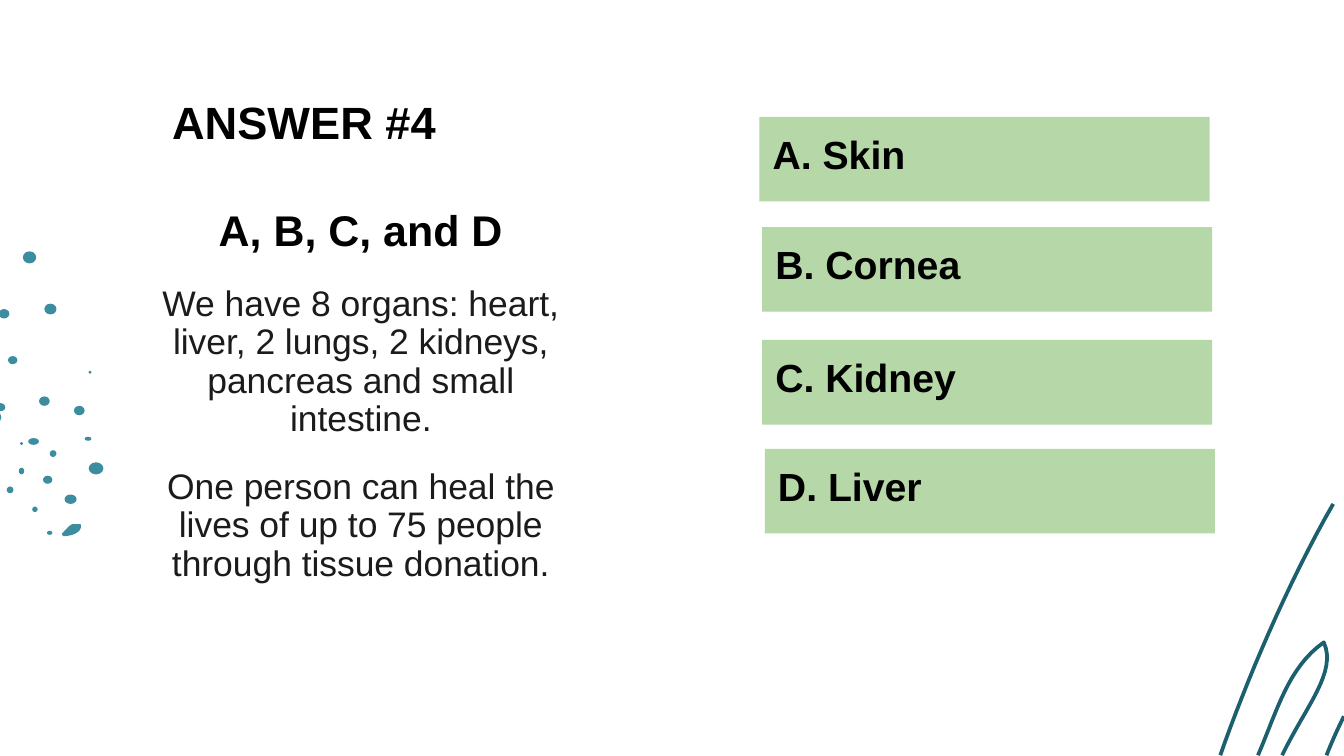
from lxml import etree
from pptx import Presentation
from pptx import util as u
from pptx.dml.color import RGBColor
from pptx.enum import shapes, text
from pptx.oxml import ns

WIDTH, HEIGHT = u.Inches(10), u.Inches(10) * 9 // 16
BLACK, DARK, GREEN, TEAL, DEEP = "000000", "1B1B1B", "B6D7A8", "3C8DA0", "1C5F6F"

DOTS = [
    (-0.12, 3.05, 0.13, 0.11), (0.15, 3.29, 0.02, 0.02), (0.14, 3.48, 0.04, 0.05),
    (0.24, 3.77, 0.04, 0.04), (0.35, 3.95, 0.04, 0.03), (0.48, 3.68, 0.09, 0.07),
    (0.32, 3.54, 0.07, 0.06), (0.05, 3.62, 0.05, 0.05), (0.37, 3.35, 0.05, 0.05),
    (0.21, 3.26, 0.08, 0.05), (0.29, 2.95, 0.08, 0.07), (-0.03, 3, 0.07, 0.06),
    (0.06, 2.65, 0.07, 0.06), (-0.01, 2.3, 0.08, 0.07), (0.66, 2.76, 0.02, 0.02),
    (0.55, 3.02, 0.08, 0.07), (0.63, 3.25, 0.05, 0.03), (0.66, 3.44, 0.11, 0.09),
    (0.33, 2.26, 0.09, 0.08), (0.17, 1.87, 0.1, 0.09),
]
DROP = [
    [(0.56, 3.9), (0.52, 3.89), (0.49, 3.95), (0.46, 3.97)],
    [(0.47, 3.99), (0.55, 3.99), (0.62, 3.95), (0.6, 3.9)],
]
STROKES = [
    [[(9.92, 3.75), (9.57, 4.36), (9.27, 5.08), (9.08, 5.62)]],
    [[(9.36, 5.62), (9.5, 5.3), (9.58, 4.97), (9.85, 4.78)],
     [(9.85, 4.78), (9.95, 5), (9.72, 5.25), (9.54, 5.62)]],
    [[(9.87, 5.62), (9.91, 5.52), (9.95, 5.43), (10, 5.33)]],
]
ANSWERS = [("A. Skin", 5.65, 0.87), ("B. Cornea", 5.67, 1.69),
           ("C. Kidney", 5.67, 2.53), ("D. Liver", 5.69, 3.34)]
BODY = [
    ("A, B, C, and D", 23, BLACK, True),
    ("We have 8 organs: heart, liver, 2 lungs, 2 kidneys, pancreas and small intestine.",
     19, DARK, False),
    ("One person can heal the lives of up to 75 people through tissue donation.",
     19, DARK, False),
]


def color(value):
    return RGBColor.from_string(value)


def place(shape, left, top, width, height):
    shape.left, shape.top = u.Inches(left), u.Inches(top)
    shape.width, shape.height = u.Inches(width), u.Inches(height)


def prepare_frame(frame, anchor):
    frame.word_wrap = True
    frame.auto_size = text.MSO_AUTO_SIZE.NONE
    frame.vertical_anchor = anchor
    frame.margin_left = frame.margin_right = u.Inches(0.1)
    frame.margin_top = frame.margin_bottom = u.Inches(0.1)


def style_paragraph(paragraph, size, value, bold, alignment):
    paragraph.alignment = alignment
    for run in paragraph.runs:
        run.font.name = "Arial"
        run.font.size = u.Pt(size)
        run.font.bold = bold
        run.font.color.rgb = color(value)


def paint(shape, value):
    shape.shadow.inherit = False
    shape.fill.solid()
    shape.fill.fore_color.rgb = color(value)
    shape.line.fill.background()


def add_filled(slide, kind, box, value):
    shape = slide.shapes.add_shape(kind, *(u.Inches(length) for length in box))
    paint(shape, value)
    return shape


def curve_points(curve, steps=16):
    for step in range(steps + 1):
        t = step / steps
        weights = ((1 - t) ** 3, 3 * t * (1 - t) ** 2, 3 * t * t * (1 - t), t ** 3)
        yield tuple(u.Inches(sum(w * point[axis] for w, point in zip(weights, curve)))
                    for axis in (0, 1))


def add_curves(slide, curves, closed):
    points = [point for curve in curves for point in curve_points(curve)]
    builder = slide.shapes.build_freeform(*points[0])
    builder.add_line_segments(points[1:], close=closed)
    return builder.convert_to_shape()


def add_decoration(slide):
    for box in DOTS:
        add_filled(slide, shapes.MSO_SHAPE.OVAL, box, TEAL)
    paint(add_curves(slide, DROP, True), TEAL)
    for curves in STROKES:
        stroke = add_curves(slide, curves, False)
        stroke.shadow.inherit = False
        stroke.fill.background()
        stroke.line.color.rgb = color(DEEP)
        stroke.line.width = u.Pt(2)


def fill_title(title):
    place(title, 1.18, 0.59, 8.82, 0.63)
    title.text_frame.text = "ANSWER #4"
    prepare_frame(title.text_frame, text.MSO_ANCHOR.MIDDLE)
    style_paragraph(title.text_frame.paragraphs[0], 24.2, BLACK, True, text.PP_ALIGN.LEFT)


def fill_body(body):
    place(body, 0.89, 1.46, 3.59, 3.84)
    frame = body.text_frame
    frame.text = "\n".join(line[0] for line in BODY)
    prepare_frame(frame, text.MSO_ANCHOR.TOP)
    for index, (paragraph, line) in enumerate(zip(frame.paragraphs, BODY)):
        properties = paragraph._p.get_or_add_pPr()
        properties.set("marL", "0")
        properties.set("indent", "0")
        etree.SubElement(properties, ns.qn("a:buNone"))
        style_paragraph(paragraph, *line[1:], text.PP_ALIGN.CENTER)
        paragraph.line_spacing = 0.9
        paragraph.space_before = u.Pt(16 if index else 0)


def add_answer(slide, label, left, top):
    card = add_filled(slide, shapes.MSO_SHAPE.RECTANGLE, (left, top, 3.35, 0.63), GREEN)
    card.text_frame.text = label
    prepare_frame(card.text_frame, text.MSO_ANCHOR.TOP)
    style_paragraph(card.text_frame.paragraphs[0], 21, BLACK, True, text.PP_ALIGN.LEFT)


def main():
    presentation = Presentation()
    presentation.slide_width = WIDTH
    presentation.slide_height = HEIGHT
    slide = presentation.slides.add_slide(presentation.slide_layouts[1])
    add_decoration(slide)
    fill_title(slide.shapes.title)
    fill_body(slide.placeholders[1])
    for answer in ANSWERS:
        add_answer(slide, *answer)
    presentation.save("out.pptx")


if __name__ == "__main__":
    main()
